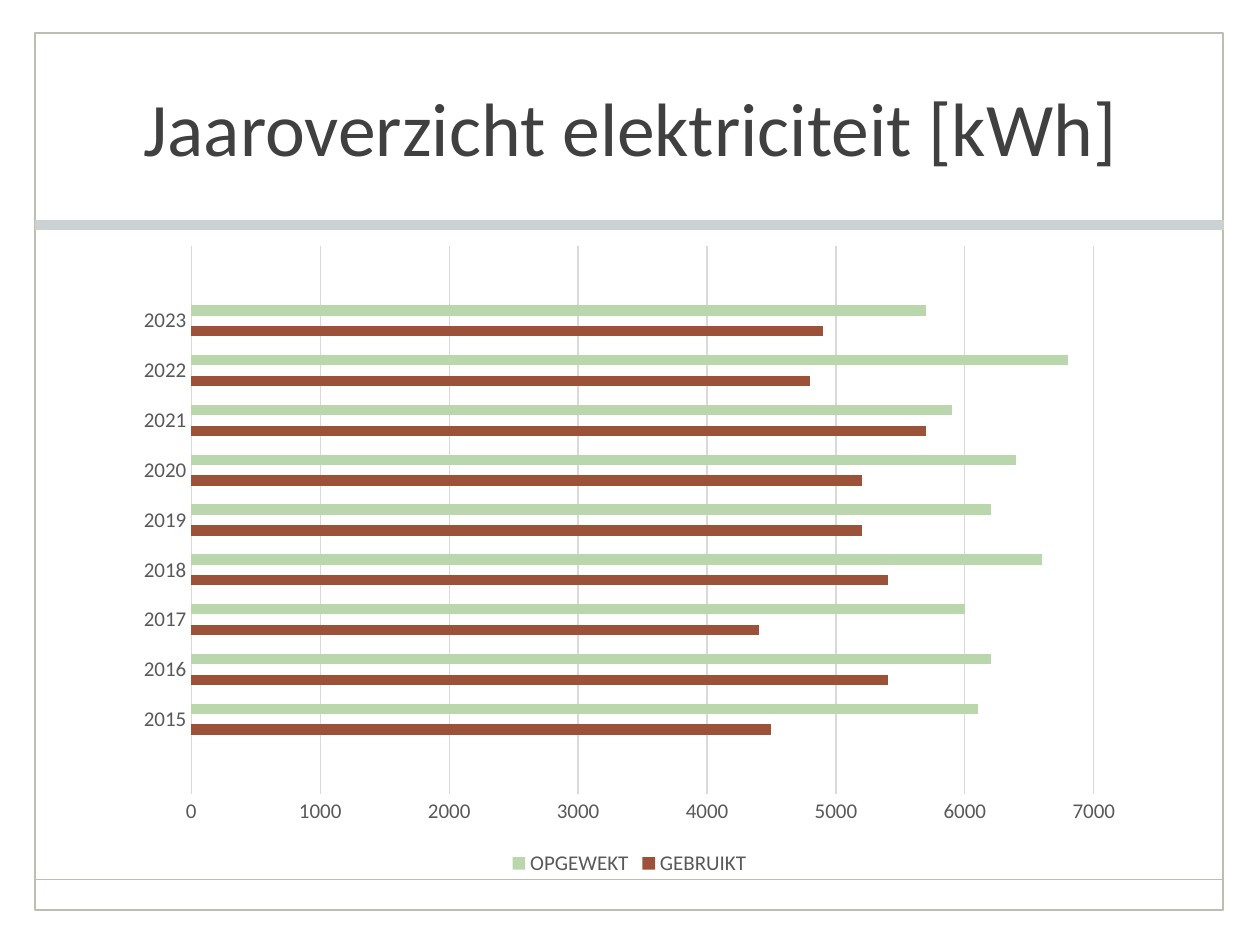
from lxml import etree
from pptx import Presentation
from pptx.chart.data import CategoryChartData
from pptx.dml.color import RGBColor
from pptx.enum.chart import XL_CHART_TYPE as ChartType
from pptx.enum.chart import XL_LEGEND_POSITION as LegendPosition
from pptx.enum.chart import XL_TICK_MARK as TickMark
from pptx.enum.shapes import MSO_CONNECTOR as Connector
from pptx.enum.shapes import MSO_SHAPE as Shape
from pptx.enum.text import MSO_ANCHOR as Anchor
from pptx.enum.text import PP_ALIGN as Align
from pptx.oxml import parse_xml
from pptx.oxml.ns import nsdecls, qn
from pptx.util import Cm, Pt

FRAME_LEFT, FRAME_WIDTH = 0.71, 23.95
YEARS = [str(year) for year in range(2015, 2024)]
SERIES = [
    ("GEBRUIKT", "9C5238", [4500, 5400, 4400, 5400, 5200, 5200, 5700, 4800, 4900]),
    ("Series 2", "C1AD79", [None] * len(YEARS)),
    ("OPGEWEKT", "BAD6AD", [6100, 6200, 6000, 6600, 6200, 6400, 5900, 6800, 5700]),
]


def color(value):
    return RGBColor.from_string(value)


class SlideBuilder:
    """Holds the style and the current slide, and adds its elements."""

    font = "Calibri"
    title_color = "404040"
    label_color = "595959"
    grid_color = "D9D9D9"
    frame_color = "BEBDB2"

    def __init__(self, slide):
        self.slide = slide

    def style_font(self, font, size, font_color):
        font.name = self.font
        font.size = Pt(size)
        font.bold = False
        font.color.rgb = color(font_color)

    def style_line(self, line, line_color, width):
        line.color.rgb = color(line_color)
        line.width = Pt(width)

    def title(self, text, left, top, width, height):
        shape = self.slide.shapes.title
        shape.left, shape.top = Cm(left), Cm(top)
        shape.width, shape.height = Cm(width), Cm(height)
        frame = shape.text_frame
        frame.word_wrap = True
        frame.vertical_anchor = Anchor.MIDDLE
        paragraph = frame.paragraphs[0]
        paragraph.alignment = Align.CENTER
        run = paragraph.add_run()
        run.text = text
        self.style_font(run.font, 43.2, self.title_color)

    def rectangle(self, left, top, width, height, line_color, line_width, fill=None):
        shape = self.slide.shapes.add_shape(
            Shape.RECTANGLE, Cm(left), Cm(top), Cm(width), Cm(height)
        )
        shape.shadow.inherit = False
        if fill:
            shape.fill.solid()
            shape.fill.fore_color.rgb = color(fill)
        else:
            shape.fill.background()
        self.style_line(shape.line, line_color, line_width)

    def rule(self, left, top, width):
        connector = self.slide.shapes.add_connector(
            Connector.STRAIGHT, Cm(left), Cm(top), Cm(left + width), Cm(top)
        )
        self.style_line(connector.line, self.frame_color, 1)
        etree.SubElement(connector.element.find(qn("p:spPr")), qn("a:effectLst"))

    def bar_chart(self, categories, series_list, left, top, width, height):
        data = CategoryChartData()
        data.categories = ["", *categories, ""]
        for name, _, values in series_list:
            data.add_series(name, [None, *values, None])
        chart = self.slide.shapes.add_chart(
            ChartType.BAR_CLUSTERED, Cm(left), Cm(top), Cm(width), Cm(height), data
        ).chart
        chart.has_title = False
        self.style_font(chart.font, 10, "000000")
        plot = chart.plots[0]
        plot.gap_width = 182
        plot.overlap = 0
        plot.vary_by_categories = False
        for series, (_, fill, _) in zip(plot.series, series_list):
            series.format.fill.solid()
            series.format.fill.fore_color.rgb = color(fill)
        self.axes(chart)
        self.legend(chart, hidden=1)

    def axes(self, chart):
        for axis in (chart.category_axis, chart.value_axis):
            axis.major_tick_mark = axis.minor_tick_mark = TickMark.NONE
            self.style_font(axis.tick_labels.font, 12, self.label_color)
        chart.category_axis.has_major_gridlines = False
        self.style_line(chart.category_axis.format.line, self.grid_color, 0.75)
        value_axis = chart.value_axis
        value_axis.minimum_scale, value_axis.maximum_scale = 0, 7000
        value_axis.major_unit = 1000
        value_axis.format.line.fill.background()
        value_axis.has_major_gridlines = True
        self.style_line(value_axis.major_gridlines.format.line, self.grid_color, 0.75)

    def legend(self, chart, hidden):
        chart.has_legend = True
        chart.legend.position = LegendPosition.BOTTOM
        chart.legend.include_in_layout = False
        self.style_font(chart.legend.font, 12, self.label_color)
        position = next(chart.element.iter(qn("c:legendPos")))
        position.addnext(parse_xml(
            f'<c:legendEntry {nsdecls("c")}><c:idx val="{hidden}"/>'
            '<c:delete val="1"/></c:legendEntry>'
        ))


def main():
    presentation = Presentation()
    presentation.slide_width, presentation.slide_height = Cm(25.4), Cm(19.05)
    slide = presentation.slides.add_slide(presentation.slide_layouts[5])
    builder = SlideBuilder(slide)
    builder.rectangle(FRAME_LEFT, 0.66, FRAME_WIDTH, 17.68, builder.frame_color, 1)
    builder.rule(FRAME_LEFT, 17.73, FRAME_WIDTH)
    builder.rectangle(FRAME_LEFT, 4.45, FRAME_WIDTH, 0.18, "D1D0C8", 0.25, "CBD2D5")
    builder.title("Jaaroverzicht elektriciteit [kWh]", 1.32, 0.69, 22.78, 3.73)
    builder.bar_chart(YEARS, SERIES, 2.49, 4.7, 20.4, 13.06)
    presentation.save("out.pptx")


if __name__ == "__main__":
    main()
